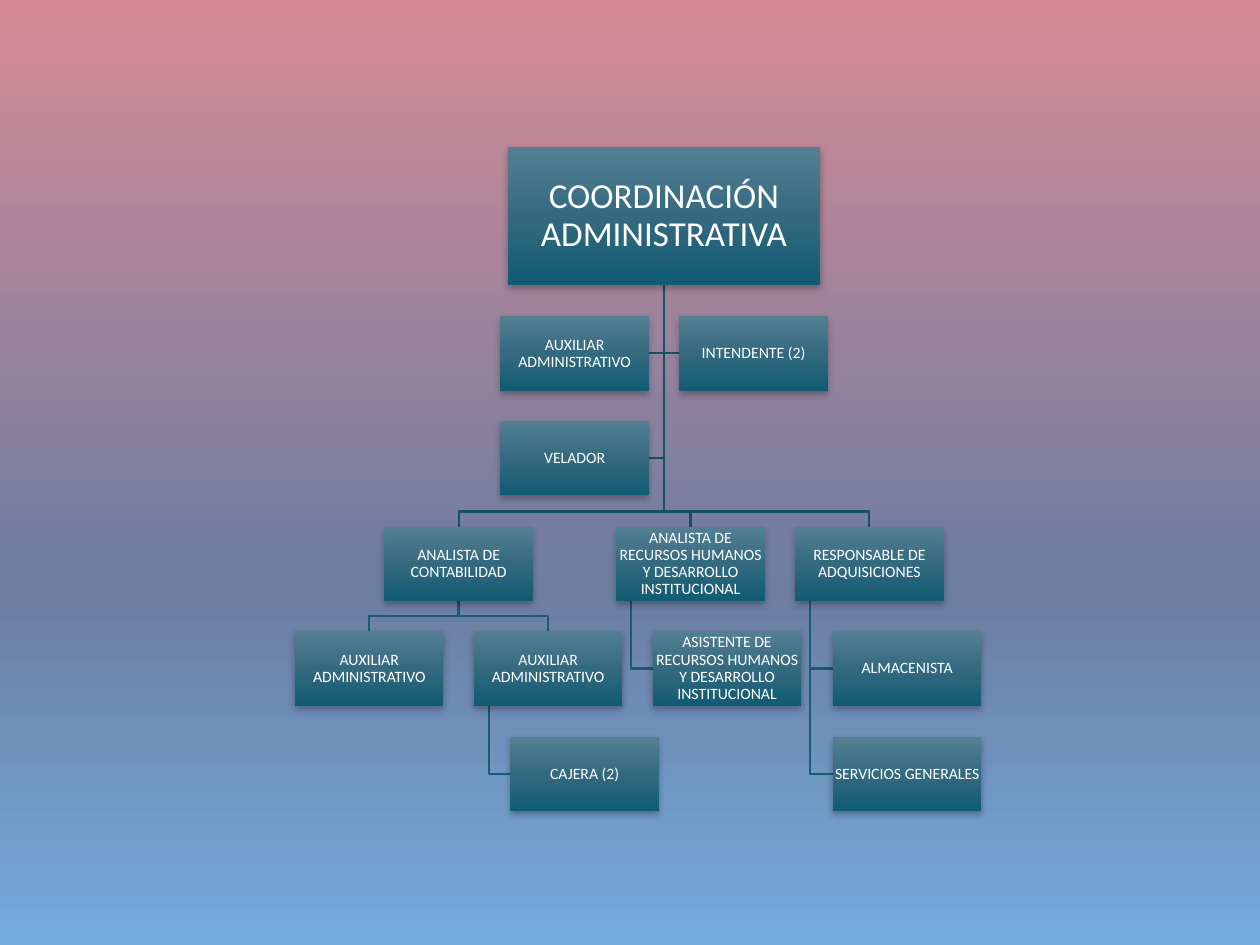
from dataclasses import dataclass
from typing import Optional

from lxml import etree
from pptx import Presentation
from pptx.dml import color, fill as dml_fill
from pptx.enum import shapes, text
from pptx.oxml import ns
from pptx.util import Inches, Pt

FONT = "Calibri"
BACKGROUND = [(0, "D78A95"), (62, "6C7DA1"), (100, "73ABDD")]
BOX_FILL = [(0, "547F93"), (50, "346A80"), (100, "105B73")]
ROOT_LINE, BRANCH_LINE = "165063", "195B70"
ROWS = (2.51, 3.34, 4.18, 5.01, 5.85)
COLUMNS = (2.34, 3.76, 5.18, 6.61)
BOX_W, BOX_H = 1.18, 0.59
BEND = 0.12  # height of the bend above a child box
HANG = 0.12  # distance of a hanging line from the parent's left side
INSET = 0.01


@dataclass
class Post:
    title: str
    left: float
    top: float
    parent: Optional["Post"] = None
    beside: bool = False
    width: float = BOX_W
    height: float = BOX_H
    size: int = 9

    @property
    def centre(self) -> float:
        return self.left + self.width / 2

    @property
    def bottom(self) -> float:
        return self.top + self.height


def rgb(value: str) -> color.RGBColor:
    return color.RGBColor.from_string(value)


def set_gradient(fill: dml_fill.FillFormat, element, stops) -> None:
    """Fill from top to bottom; element is the XML that holds the fill."""
    fill.gradient()
    fill.gradient_angle = 270
    gs_list = element.find(".//" + ns.qn("a:gsLst"))
    for gs in list(gs_list):
        gs_list.remove(gs)
    for position, value in stops:
        gs = etree.SubElement(gs_list, ns.qn("a:gs"), pos=str(position * 1000))
        etree.SubElement(gs, ns.qn("a:srgbClr"), val=value)


def add_shadow(sp) -> None:
    sp.shadow.inherit = False
    effects = sp.element.spPr.find(ns.qn("a:effectLst"))
    outer = etree.SubElement(
        effects, ns.qn("a:outerShdw"), blurRad=str(Pt(4)), dist=str(Pt(2)),
        dir="5400000", algn="ctr", rotWithShape="0")
    black = etree.SubElement(outer, ns.qn("a:srgbClr"), val="000000")
    etree.SubElement(black, ns.qn("a:alpha"), val="28000")


def route(post: Post) -> list[tuple[float, float]]:
    """Corner points of the line from the parent to the post."""
    parent = post.parent
    if not post.beside:
        bend = post.top - BEND
        return [(parent.centre, parent.bottom), (parent.centre, bend),
                (post.centre, bend), (post.centre, post.top)]
    trunk = parent.left + HANG if parent.parent else parent.centre
    side = post.left if post.left > trunk else post.left + post.width
    middle = post.top + post.height / 2
    return [(trunk, parent.bottom), (trunk, middle), (side, middle)]


def draw_line(slide, post: Post) -> None:
    start, *corners = [(Inches(x), Inches(y)) for x, y in route(post)]
    builder = slide.shapes.build_freeform(*start)
    builder.add_line_segments(corners, close=False)
    sp = builder.convert_to_shape()
    sp.shadow.inherit = False
    sp.fill.background()
    sp.line.width = Pt(1.25)
    sp.line.color.rgb = rgb(BRANCH_LINE if post.parent.parent else ROOT_LINE)


def draw_box(slide, post: Post) -> None:
    sp = slide.shapes.add_shape(
        shapes.MSO_SHAPE.RECTANGLE, Inches(post.left), Inches(post.top),
        Inches(post.width), Inches(post.height))
    set_gradient(sp.fill, sp.element, BOX_FILL)
    sp.line.fill.background()
    add_shadow(sp)
    tf = sp.text_frame
    tf.word_wrap = True
    tf.vertical_anchor = text.MSO_ANCHOR.MIDDLE
    tf.margin_left = tf.margin_right = Inches(INSET)
    tf.margin_top = tf.margin_bottom = Inches(INSET)
    p = tf.paragraphs[0]
    p.text = post.title
    p.alignment = text.PP_ALIGN.CENTER
    p.line_spacing = 0.9
    p.font.name = FONT
    p.font.size = Pt(post.size)
    p.font.color.rgb = rgb("FFFFFF")


def chart_posts() -> list[Post]:
    root = Post("COORDINACIÓN ADMINISTRATIVA", 4.03, 1.17,
                width=2.48, height=1.09, size=20)
    accounting = Post("ANALISTA DE CONTABILIDAD", 3.05, ROWS[2], root)
    staff = Post("ANALISTA DE RECURSOS HUMANOS Y DESARROLLO INSTITUCIONAL",
                 4.89, ROWS[2], root)
    purchasing = Post("RESPONSABLE DE ADQUISICIONES", 6.31, ROWS[2], root)
    assistant = Post("AUXILIAR ADMINISTRATIVO", COLUMNS[1], ROWS[3], accounting)
    return [
        root,
        accounting,
        Post("AUXILIAR ADMINISTRATIVO", COLUMNS[0], ROWS[3], accounting),
        assistant,
        Post("CAJERA (2)", 4.05, ROWS[4], assistant, beside=True),
        staff,
        Post("ASISTENTE DE RECURSOS HUMANOS Y DESARROLLO INSTITUCIONAL",
             COLUMNS[2], ROWS[3], staff, beside=True),
        purchasing,
        Post("ALMACENISTA", COLUMNS[3], ROWS[3], purchasing, beside=True),
        Post("SERVICIOS GENERALES", COLUMNS[3], ROWS[4], purchasing, beside=True),
        Post("AUXILIAR ADMINISTRATIVO", 3.97, ROWS[0], root, beside=True),
        Post("INTENDENTE (2)", 5.39, ROWS[0], root, beside=True),
        Post("VELADOR", 3.97, ROWS[1], root, beside=True),
    ]


def main() -> None:
    prs = Presentation()
    prs.slide_width, prs.slide_height = Inches(10), Inches(7.5)
    slide = prs.slides.add_slide(prs.slide_layouts[6])
    set_gradient(slide.background.fill, slide.element, BACKGROUND)
    posts = chart_posts()
    for post in reversed(posts):
        if post.parent:
            draw_line(slide, post)
    for post in posts:
        draw_box(slide, post)
    prs.save("out.pptx")


if __name__ == "__main__":
    main()
